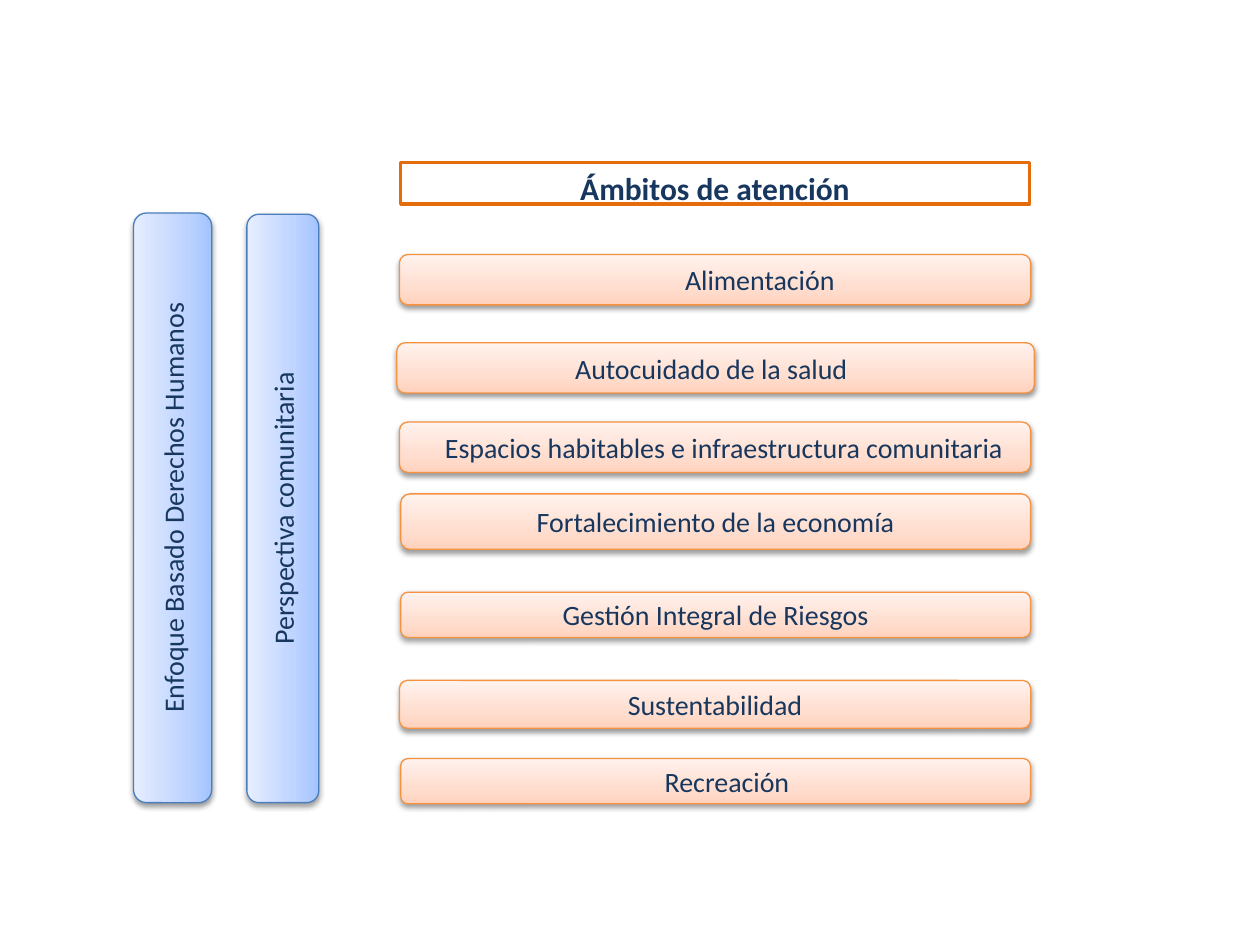
from copy import deepcopy

from lxml.etree import SubElement
from pptx import Presentation
from pptx.dml.color import RGBColor
from pptx.enum.shapes import MSO_SHAPE
from pptx.enum.text import MSO_ANCHOR, PP_ALIGN
from pptx.oxml.ns import qn
from pptx.util import Inches, Pt

NAVY = "17375E"
PEACH = ("FFD2BD", "FFDED0", "FFF2ED")
BLUE = ("A4C4FF", "BFD4FF", "E6EEFF")
AREAS = [
    ("Alimentación", 3.17, 2.02, 5.01, 0.4, 0.81),
    ("Autocuidado de la salud", 3.15, 2.72, 5.06, 0.4, 0.03),
    ("Espacios habitables e infraestructura comunitaria", 3.17, 3.35, 5.01, 0.4, 0.24),
    ("Fortalecimiento de la economía", 3.18, 3.92, 5, 0.44, 0.1),
    ("Gestión Integral de Riesgos", 3.18, 4.7, 5, 0.36, 0.1),
    ("Sustentabilidad", 3.17, 5.4, 5.01, 0.38, 0.1),
    ("Recreación", 3.18, 6.02, 5, 0.36, 0.28),
]
APPROACHES = [
    ("Enfoque Basado Derechos Humanos", -0.97, 3.72, 4.68, 0.62),
    ("Perspectiva comunitaria", -0.09, 3.75, 4.67, 0.57),
]


def color(value):
    """Turn a hex string into a colour."""
    return RGBColor.from_string(value)


def add_box(page, kind, place, line, width):
    """Add an outlined shape without the theme shadow."""
    box = page.shapes.add_shape(kind, *(Inches(length) for length in place))
    box.shadow.inherit = False
    box.line.color.rgb = color(line)
    box.line.width = Pt(width)
    return box


def write(box, text, size, bold=False, anchor=MSO_ANCHOR.MIDDLE):
    """Put one centred line of text in a shape."""
    frame = box.text_frame
    frame.word_wrap = True
    frame.vertical_anchor = anchor
    paragraph = frame.paragraphs[0]
    paragraph.text = text
    paragraph.alignment = PP_ALIGN.CENTER
    font = paragraph.font
    font.name, font.size, font.bold = "Calibri", Pt(size), bold
    font.color.rgb = color(NAVY)


def shade(box, colors):
    """Fill a shape with three stops, darkest at the bottom."""
    box.fill.gradient()
    box.fill.gradient_angle = 90
    stops = box._element.spPr.find(qn("a:gradFill")).find(qn("a:gsLst"))
    stops.append(deepcopy(stops[-1]))
    for stop, position, value in zip(box.fill.gradient_stops, (0, 0.35, 1), colors):
        stop.position = position
        stop.color.rgb = color(value)


def add_shadow(box):
    """Cast a soft shadow straight down."""
    effects = box._element.spPr.find(qn("a:effectLst"))
    shadow = SubElement(effects, qn("a:outerShdw"), blurRad=str(Pt(3.1)),
                        dist=str(Pt(1.6)), dir="5400000", rotWithShape="0")
    black = SubElement(shadow, qn("a:srgbClr"), val="000000")
    SubElement(black, qn("a:alpha"), val="38000")


def add_bar(page, text, place, colors, line):
    """Add a rounded, shaded and labelled bar."""
    bar = add_box(page, MSO_SHAPE.ROUNDED_RECTANGLE, place, line, 0.75)
    shade(bar, colors)
    add_shadow(bar)
    write(bar, text, 16)
    return bar


def add_heading(page, text):
    """Add the framed heading above the areas."""
    heading = add_box(page, MSO_SHAPE.RECTANGLE, (3.18, 1.29, 4.99, 0.33), "E46C0A", 2)
    heading.fill.solid()
    heading.fill.fore_color.rgb = color("FFFFFF")
    write(heading, text, 18, True, MSO_ANCHOR.TOP)
    heading.text_frame.margin_bottom = 0


def main():
    """Build the slide and save it."""
    deck = Presentation()
    deck.slide_width, deck.slide_height = Inches(10), Inches(7.5)
    page = deck.slides.add_slide(deck.slide_layouts[6])
    add_heading(page, "Ámbitos de atención")
    for text, *place, inset in AREAS:
        bar = add_bar(page, text, place, PEACH, "F69240")
        bar.text_frame.margin_left = Inches(inset)
    for text, *place in APPROACHES:
        bar = add_bar(page, text, place, BLUE, "4B7EBC")
        bar.rotation = 270
    deck.save("out.pptx")


if __name__ == "__main__":
    main()
